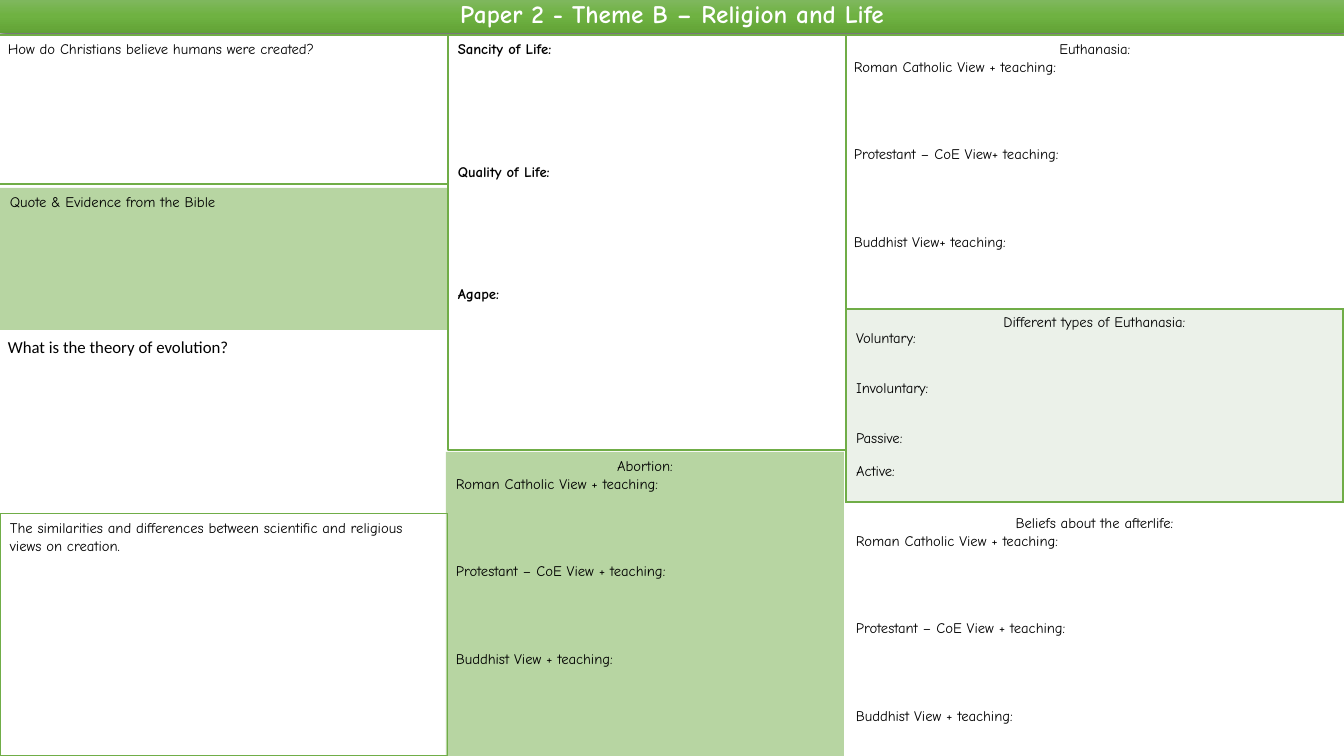
from dataclasses import dataclass
from typing import Optional

from pptx import Presentation
from pptx import util as u
from pptx.dml.color import RGBColor
from pptx.enum import shapes, text
from pptx.oxml import parse_xml
from pptx.oxml.ns import nsdecls, qn

GREEN = RGBColor(0x70, 0xAD, 0x47)
PALE = RGBColor(0xEB, 0xF1, 0xE9)
WHITE = RGBColor(0xFF, 0xFF, 0xFF)
BLACK = RGBColor(0, 0, 0)
BANNER_STOPS = ((0, "81B861"), (50, "6FB242"), (100, "62A336"))
HAND = "Comic Neue"
VIEW_GAP = 70
TERM_GAP = 105


@dataclass(frozen=True)
class Line:
    text: str
    gap: int = 0


@dataclass(frozen=True)
class Panel:
    left: int
    top: int
    width: int
    height: int
    lines: tuple[Line, ...]
    fill: Optional[RGBColor] = None
    alpha: int = 100
    border: float = 0
    headed: bool = False
    bold: bool = False
    font: str = HAND
    size: float = 10.5
    anchor: text.MSO_ANCHOR = text.MSO_ANCHOR.TOP


def px(n: int) -> u.Emu:
    return u.Emu(round(n * 12192000 / 1344))


def views(heading: str, plus: str, first_plus: str = " +") -> tuple[Line, ...]:
    return (
        Line(heading),
        Line(f"Roman Catholic View{first_plus} teaching:"),
        Line(f"Protestant – CoE View{plus} teaching:", VIEW_GAP),
        Line(f"Buddhist View{plus} teaching:", VIEW_GAP),
    )


PANELS = (
    Panel(-2, 35, 450, 149, (Line("How do Christians believe humans were created?"),),
          fill=WHITE, border=1),
    Panel(0, 188, 450, 142, (Line("Quote & Evidence from the Bible"),),
          fill=GREEN, alpha=50),
    Panel(844, 35, 502, 275, views("Euthanasia:", "+"),
          fill=WHITE, border=1, headed=True),
    Panel(0, 514, 448, 242,
          (Line("The similarities and differences between scientific and "
                "religious views on creation."),), border=0.75),
    Panel(446, 452, 398, 304, views("Abortion:", " +"),
          fill=GREEN, alpha=50, headed=True),
    Panel(448, 35, 398, 415,
          (Line("Sancity of Life:"), Line("Quality of Life:", TERM_GAP),
           Line("Agape:", TERM_GAP)), fill=WHITE, border=1, bold=True),
    Panel(-2, 290, 446, 72, (Line("What is the theory of evolution?"),),
          font="Calibri", size=12, anchor=text.MSO_ANCHOR.BOTTOM),
    Panel(846, 509, 497, 224, views("Beliefs about the afterlife:", " +"),
          headed=True),
)

TYPES = Panel(
    846, 309, 497, 193,
    (Line("Different types of Euthanasia:"), Line("Voluntary:"),
     Line("Involuntary:", 33), Line("Passive:", 33), Line("Active:", 16)),
    fill=PALE, border=1, headed=True)


def write(tf, panel: Panel) -> None:
    tf.text = "\n".join(line.text for line in panel.lines)
    for i, (p, line) in enumerate(zip(tf.paragraphs, panel.lines)):
        centred = panel.headed and i == 0
        p.alignment = text.PP_ALIGN.CENTER if centred else text.PP_ALIGN.LEFT
        if line.gap:
            p.space_before = u.Pt(round(px(line.gap).pt, 1))
        for r in p.runs:
            r.font.name = panel.font
            r.font.size = u.Pt(panel.size)
            r.font.bold = panel.bold
            r.font.color.rgb = BLACK


def add_panel(s, panel: Panel) -> None:
    at = [px(n) for n in (panel.left, panel.top, panel.width, panel.height)]
    if panel.fill is None and not panel.border:
        sp = s.shapes.add_textbox(*at)
    else:
        sp = s.shapes.add_shape(shapes.MSO_SHAPE.RECTANGLE, *at)
        sp.shadow.inherit = False
        if panel.fill is None:
            sp.fill.background()
        else:
            sp.fill.solid()
            sp.fill.fore_color.rgb = panel.fill
        if panel.alpha < 100:
            colour = sp.element.spPr.find(qn("a:solidFill"))[0]
            colour.append(parse_xml(
                f'<a:alpha {nsdecls("a")} val="{panel.alpha * 1000}"/>'))
        if panel.border:
            sp.line.color.rgb = GREEN
            sp.line.width = u.Pt(panel.border)
        else:
            sp.line.fill.background()
    tf = sp.text_frame
    tf.word_wrap = True
    tf.vertical_anchor = panel.anchor
    write(tf, panel)


def add_types_table(s, panel: Panel) -> None:
    at = [px(n) for n in (panel.left, panel.top, panel.width, panel.height)]
    table = s.shapes.add_table(1, 1, *at).table
    table.first_row = table.horz_banding = False
    cell = table.cell(0, 0)
    tc_pr = cell._tc.get_or_add_tcPr()
    for side in "LRTB":
        tc_pr.append(parse_xml(
            f'<a:ln{side} {nsdecls("a")} w="{u.Pt(panel.border)}"><a:solidFill>'
            f'<a:srgbClr val="{GREEN}"/></a:solidFill></a:ln{side}>'))
    cell.fill.solid()
    cell.fill.fore_color.rgb = panel.fill
    write(cell.text_frame, panel)


def format_title(title) -> None:
    title.left, title.top, title.width, title.height = map(px, (0, -2, 1344, 35))
    stops = "".join(f'<a:gs pos="{pos * 1000}"><a:srgbClr val="{c}"/></a:gs>'
                    for pos, c in BANNER_STOPS)
    sp_pr = title.element.spPr
    sp_pr.append(parse_xml(
        f'<a:gradFill {nsdecls("a")} rotWithShape="1"><a:gsLst>{stops}</a:gsLst>'
        '<a:lin ang="5400000" scaled="0"/></a:gradFill>'))
    sp_pr.append(parse_xml(
        f'<a:effectLst {nsdecls("a")}><a:outerShdw blurRad="{u.Pt(4.5)}" '
        f'dist="{u.Pt(1.5)}" dir="5400000" algn="ctr" rotWithShape="0">'
        '<a:srgbClr val="000000"><a:alpha val="63000"/></a:srgbClr>'
        '</a:outerShdw></a:effectLst>'))
    tf = title.text_frame
    tf.text = "Paper 2 - Theme B – Religion and Life"
    tf.word_wrap = True
    tf.auto_size = text.MSO_AUTO_SIZE.NONE
    tf.vertical_anchor = text.MSO_ANCHOR.MIDDLE
    p = tf.paragraphs[0]
    p.alignment = text.PP_ALIGN.CENTER
    p.line_spacing = 0.9
    font = p.runs[0].font
    font.name = HAND
    font.size = u.Pt(18)
    font.bold = True
    font.color.rgb = WHITE


def main() -> None:
    prs = Presentation()
    prs.slide_width, prs.slide_height = px(1344), px(756)
    s = prs.slides.add_slide(prs.slide_layouts[5])
    format_title(s.shapes.title)
    for panel in PANELS[:3]:
        add_panel(s, panel)
    add_types_table(s, TYPES)
    for panel in PANELS[3:]:
        add_panel(s, panel)
    prs.save("out.pptx")


if __name__ == "__main__":
    main()
